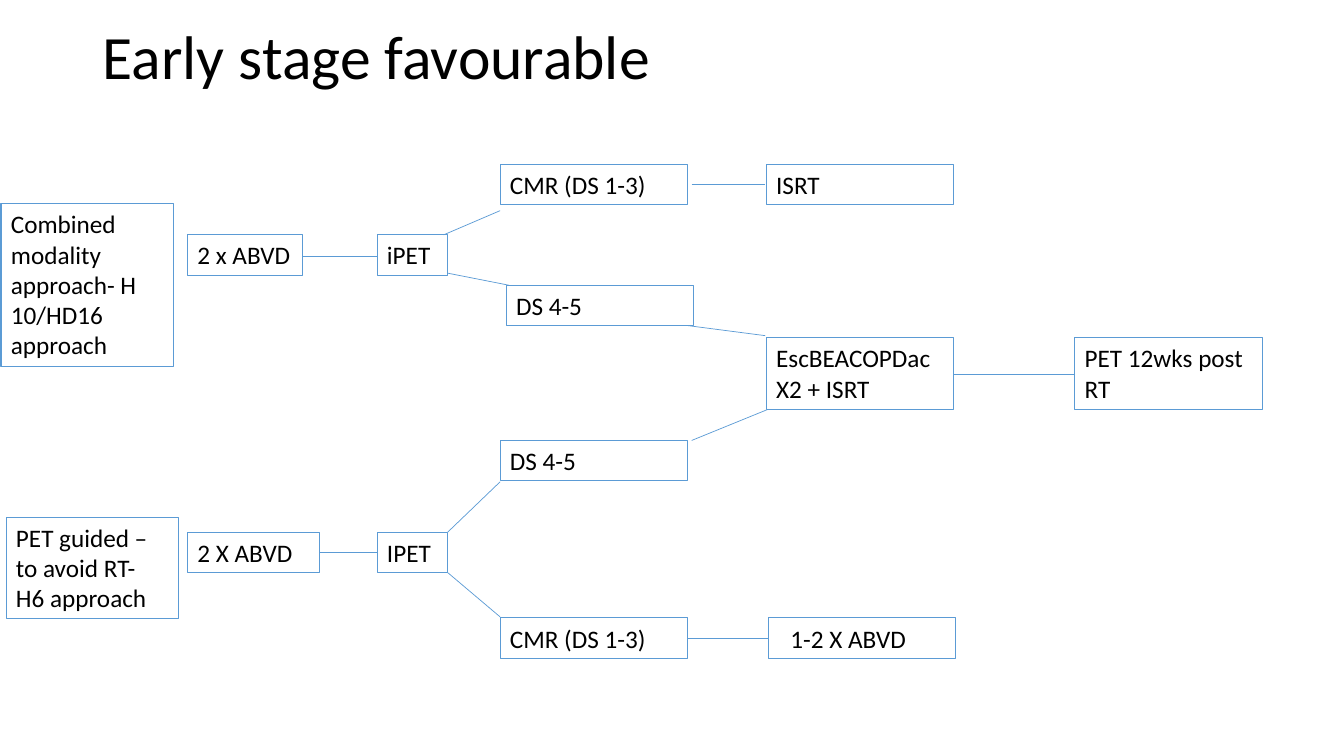
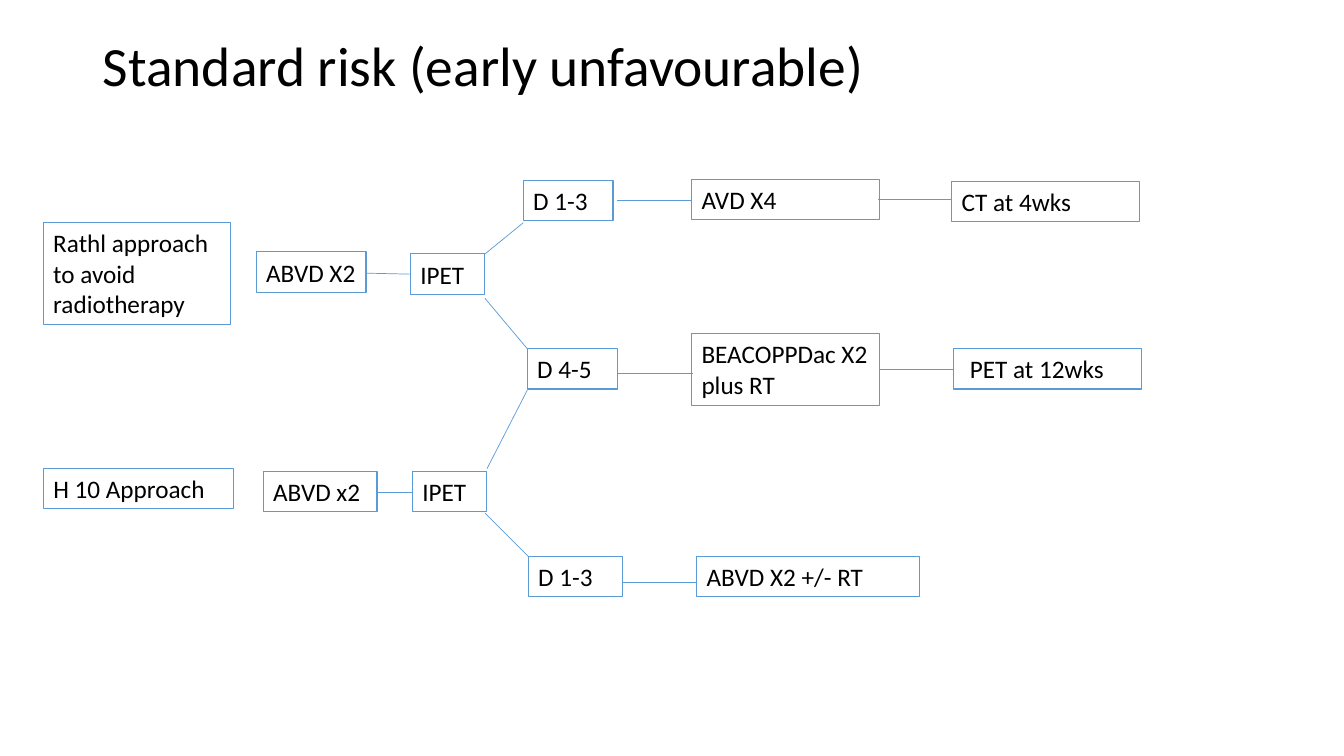
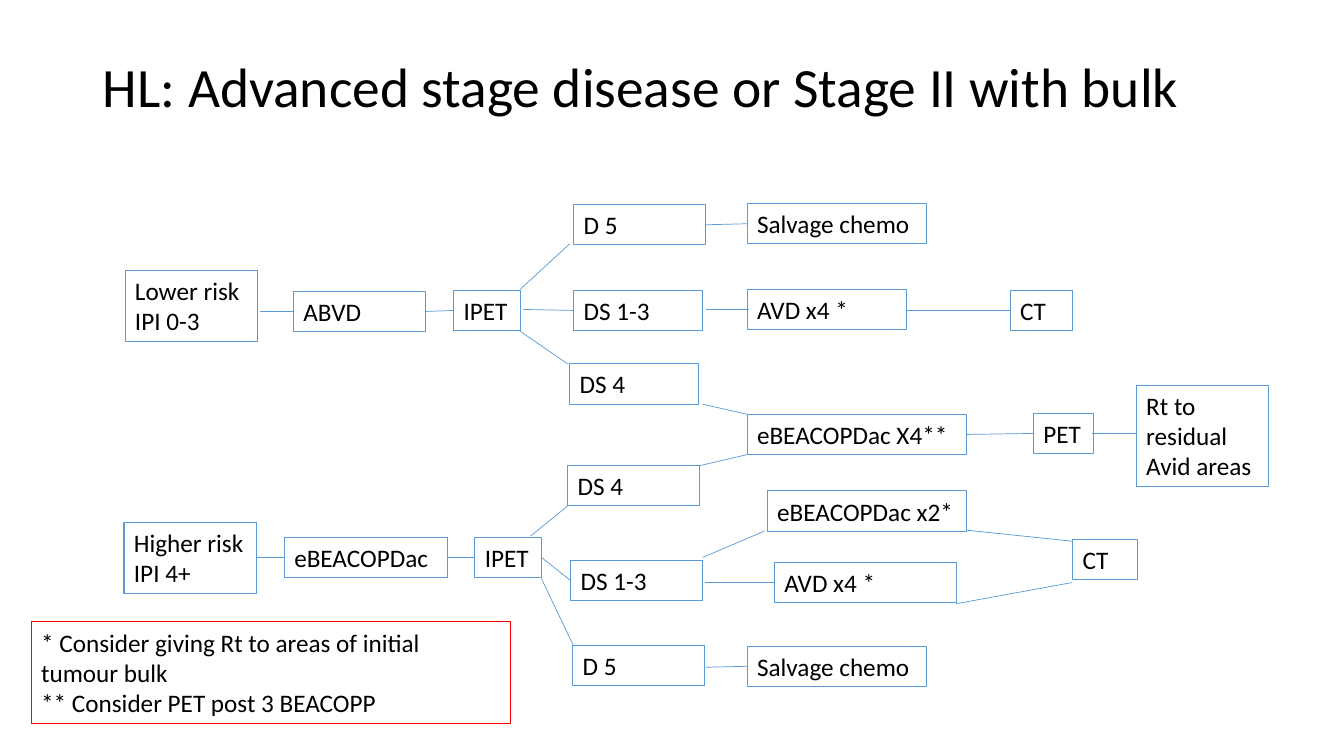
"""Build three treatment flow charts with a shared title and box style."""
import pptx
import pptx.dml.color
import pptx.enum.shapes
import pptx.enum.text
import pptx.oxml.ns
import pptx.util
from lxml import etree
from pptx.util import Inches

BLACK = pptx.dml.color.RGBColor(0x00, 0x00, 0x00)
BLUE = pptx.dml.color.RGBColor(0x5B, 0x9B, 0xD5)
RED = pptx.dml.color.RGBColor(0xFF, 0x00, 0x00)
FONT = "Calibri"
TOP = pptx.enum.text.MSO_ANCHOR.TOP
MIDDLE = pptx.enum.text.MSO_ANCHOR.MIDDLE
PADDING = 0.1
LINE_HEIGHT = 0.304
SPACE_WIDTH = 0.06


def write(frame, text, size=18, anchor=TOP, spacing=1.0, indent=0):
    """Fill a text frame with one paragraph for each line of text."""
    frame.word_wrap = True
    frame.auto_size = pptx.enum.text.MSO_AUTO_SIZE.NONE
    frame.vertical_anchor = anchor
    frame.margin_left = Inches(PADDING + indent)
    frame.margin_right = Inches(PADDING)
    frame.margin_top = frame.margin_bottom = Inches(PADDING / 2)
    for number, line in enumerate(text.split("\n")):
        para = frame.add_paragraph() if number else frame.paragraphs[0]
        para.alignment = pptx.enum.text.PP_ALIGN.LEFT
        para.line_spacing = spacing
        span = para.add_run()
        span.text = line
        span.font.name = FONT
        span.font.size = pptx.util.Pt(size)
        span.font.color.rgb = BLACK


# Each box is text, left, top, width, number of lines; each link is x1, y1, x2, y2.
FAVOURABLE = {
    "title": ("Early stage favourable", 0.16, 0.87, 44),
    "boxes": [
        ("Combined modality approach- H 10/HD16 approach", 0.01, 2.02, 1.71, 5),
        ("2 x ABVD", 1.86, 2.33, 1.14, 1),
        ("iPET", 3.74, 2.33, 0.7, 1),
        ("CMR (DS 1-3)", 4.96, 1.63, 1.86, 1),
        ("ISRT", 7.6, 1.63, 1.86, 1),
        ("DS 4-5", 5.02, 2.83, 1.86, 1),
        ("EscBEACOPDac X2 + ISRT", 7.6, 3.35, 1.86, 2),
        ("PET 12wks post RT", 10.66, 3.35, 1.86, 2),
        ("PET guided – to avoid RT- H6 approach", 0.06, 5.13, 1.71, 3),
        ("2 X ABVD", 1.86, 5.28, 1.31, 1),
        ("IPET", 3.74, 5.28, 0.7, 1),
        ("DS 4-5", 4.96, 4.37, 1.86, 1),
        ("CMR (DS 1-3)", 4.96, 6.13, 1.86, 1),
        ("1-2 X ABVD", 7.62, 6.13, 1.86, 1),
    ],
    "links": [
        (3, 2.54, 3.74, 2.54),
        (4.4, 2.33, 4.96, 2.09),
        (4.44, 2.71, 5.05, 2.83),
        (6.86, 1.83, 7.59, 1.83),
        (6.82, 3.23, 7.59, 3.33),
        (9.46, 3.71, 10.66, 3.71),
        (3.17, 5.48, 3.74, 5.48),
        (4.44, 5.28, 4.96, 4.78),
        (4.44, 5.68, 4.96, 6.12),
        (6.86, 4.37, 7.62, 4.06),
        (6.82, 6.33, 7.62, 6.33),
    ],
}
UNFAVOURABLE = {
    "title": ("Standard risk (early unfavourable)", 0.4, 0.56, 39.6),
    "boxes": [
        ("Rathl approach to avoid radiotherapy", 0.43, 2.21, 1.86, 3),
        ("ABVD X2", 2.54, 2.5, 1.09, 1),
        ("IPET", 4.07, 2.52, 0.74, 1),
        ("D 1-3", 5.19, 1.79, 0.89, 1),
        ("AVD X4", 6.86, 1.78, 1.86, 1),
        ("CT at 4wks", 9.44, 1.8, 1.86, 1),
        ("D 4-5", 5.23, 3.46, 0.89, 1),
        ("BEACOPPDac X2 plus RT", 6.86, 3.31, 1.86, 2),
        ("PET at 12wks", 9.46, 3.46, 1.86, 1),
        ("H 10 Approach", 0.43, 4.65, 1.89, 1),
        ("ABVD x2", 2.61, 4.68, 1.13, 1),
        ("IPET", 4.09, 4.68, 0.74, 1),
        ("D 1-3", 5.24, 5.52, 0.93, 1),
        ("ABVD X2 +/- RT", 6.91, 5.52, 2.21, 1),
    ],
    "links": [
        (3.63, 2.71, 4.07, 2.72),
        (4.81, 2.52, 5.19, 2.21),
        (4.81, 2.96, 5.23, 3.46),
        (6.12, 1.99, 6.86, 1.99),
        (8.71, 1.98, 9.44, 1.98),
        (6.13, 3.7, 6.87, 3.7),
        (8.72, 3.66, 9.46, 3.66),
        (3.74, 4.88, 4.09, 4.88),
        (4.83, 4.65, 5.23, 3.87),
        (4.81, 5.09, 5.24, 5.52),
        (6.17, 5.78, 6.91, 5.78),
    ],
}
ADVANCED = {
    "title": ("HL: Advanced stage disease or Stage II with bulk", 0.4, 0.98, 39.6),
    "boxes": [
        ("Lower risk\nIPI 0-3", 1.24, 2.68, 1.31, 2),
        ("ABVD", 2.91, 2.89, 1.31, 1),
        ("IPET", 4.5, 2.88, 0.66, 1),
        ("D 5", 5.69, 2.03, 1.31, 1),
        ("Salvage chemo", 7.41, 2.02, 1.78, 1),
        ("DS 1-3", 5.69, 2.88, 1.28, 1),
        ("AVD x4 *", 7.41, 2.87, 1.58, 1),
        ("CT", 10.02, 2.88, 0.62, 1),
        ("DS 4", 5.65, 3.61, 1.28, 1),
        ("eBEACOPDac X4**", 7.41, 4.11, 2.18, 1),
        ("PET", 10.25, 4.1, 0.6, 1),
        ("Rt to residual Avid areas", 11.27, 3.82, 1.31, 3),
        ("Higher risk IPI 4+", 1.23, 5.18, 1.31, 2),
        ("eBEACOPDac", 2.82, 5.33, 1.62, 1),
        ("IPET", 4.71, 5.33, 0.66, 1),
        ("DS 4", 5.63, 4.62, 1.31, 1),
        ("DS 1-3", 5.66, 5.56, 1.31, 1),
        ("eBEACOPDac x2*", 7.61, 4.87, 1.98, 1),
        ("AVD x4 *", 7.68, 5.58, 1.81, 1),
        ("CT", 10.64, 5.35, 0.64, 1),
        ("D 5", 5.68, 6.4, 1.31, 1),
        ("Salvage chemo", 7.41, 6.41, 1.78, 1),
        ("* Consider giving Rt to areas of initial tumour bulk\n"
         "** Consider PET post 3 BEACOPP", 0.31, 6.17, 4.75, 3),
    ],
    "links": [
        (2.58, 3.09, 2.91, 3.09),
        (4.22, 3.09, 4.5, 3.08),
        (5.16, 2.87, 5.65, 2.42),
        (5.19, 3.07, 5.69, 3.08),
        (5.15, 3.28, 5.63, 3.61),
        (7, 2.23, 7.41, 2.22),
        (7, 3.07, 7.43, 3.07),
        (8.99, 3.08, 10.02, 3.08),
        (6.97, 4.01, 7.41, 4.11),
        (6.94, 4.62, 7.41, 4.51),
        (9.59, 4.31, 10.25, 4.3),
        (10.83, 4.3, 11.27, 4.3),
        (2.55, 5.53, 2.82, 5.53),
        (4.43, 5.53, 4.71, 5.53),
        (5.26, 5.32, 5.63, 5.02),
        (5.37, 5.53, 5.66, 5.76),
        (5.37, 5.74, 5.69, 6.41),
        (6.97, 5.53, 7.58, 5.27),
        (6.99, 5.78, 7.68, 5.78),
        (9.59, 5.26, 10.64, 5.37),
        (9.48, 5.99, 10.63, 5.78),
        (7, 6.62, 7.41, 6.61),
    ],
}
INDENTS = {"1-2 X ABVD": 2 * SPACE_WIDTH, "PET at 12wks": SPACE_WIDTH}

deck = pptx.Presentation()
deck.slide_width = Inches(13.33)
deck.slide_height = Inches(7.5)

for chart in (FAVOURABLE, UNFAVOURABLE, ADVANCED):
    page = deck.slides.add_slide(deck.slide_layouts[5])
    heading, top, height, size = chart["title"]
    title = page.shapes.title
    title.left, title.top = Inches(0.92), Inches(top)
    title.width, title.height = Inches(11.5), Inches(height)
    write(title.text_frame, heading, size=size, anchor=MIDDLE, spacing=0.9)

    for text, left, top, width, lines in chart["boxes"]:
        height = round(PADDING + LINE_HEIGHT * lines, 2)
        box = page.shapes.add_shape(
            pptx.enum.shapes.MSO_SHAPE.RECTANGLE,
            Inches(left), Inches(top), Inches(width), Inches(height))
        box.shadow.inherit = False
        box.fill.background()
        box.line.color.rgb = RED if text.startswith("*") else BLUE
        box.line.width = pptx.util.Pt(0.75)
        write(box.text_frame, text, indent=INDENTS.get(text, 0))

    for ends in chart["links"]:
        link = page.shapes.add_connector(
            pptx.enum.shapes.MSO_CONNECTOR.STRAIGHT, *map(Inches, ends))
        link.line.color.rgb = BLUE
        link.line.width = pptx.util.Pt(0.5)
        properties = link.element.find(pptx.oxml.ns.qn("p:spPr"))
        etree.SubElement(properties, pptx.oxml.ns.qn("a:effectLst"))

deck.save("out.pptx")
